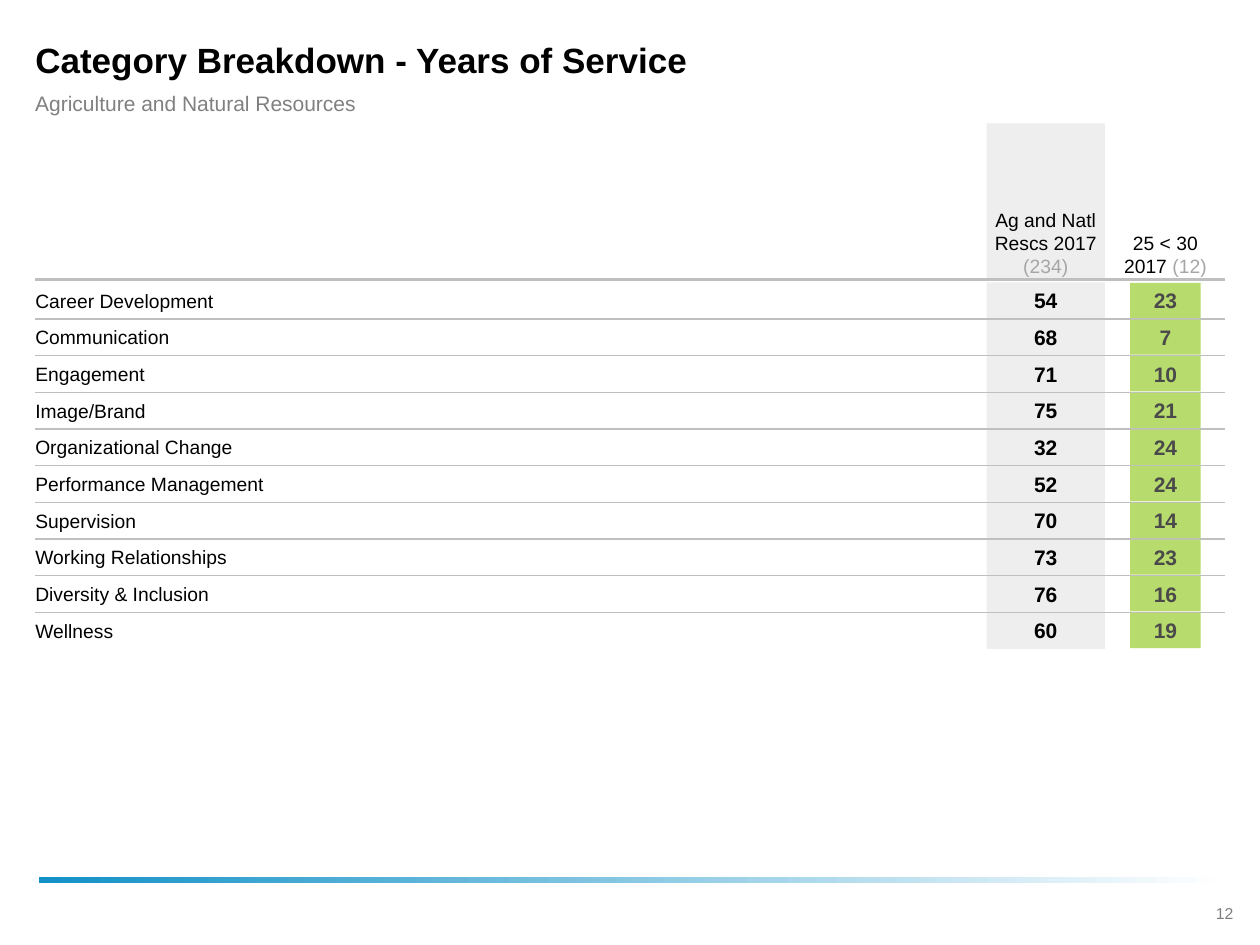
import pptx
import pptx.util
import pptx.oxml.ns
from lxml import etree
from pptx.dml.color import RGBColor
from pptx.enum.shapes import MSO_CONNECTOR, MSO_SHAPE
from pptx.enum.text import MSO_ANCHOR, MSO_AUTO_SIZE, PP_ALIGN
from pptx.util import Inches

COLORS = {
    "ink": "000000",
    "subtitle": "808080",
    "page": "7F7F7F",
    "count": "A6A6A6",
    "rule": "BFBFBF",
    "panel": "EEEEEE",
    "chip": "B7DB6C",
    "chip_text": "4A4A4A",
    "bar_start": "1291C7",
    "bar_end": "FFFFFF",
}
CATEGORIES = [
    ("Career Development", 54, 23),
    ("Communication", 68, 7),
    ("Engagement", 71, 10),
    ("Image/Brand", 75, 21),
    ("Organizational Change", 32, 24),
    ("Performance Management", 52, 24),
    ("Supervision", 70, 14),
    ("Working Relationships", 73, 23),
    ("Diversity & Inclusion", 76, 16),
    ("Wellness", 60, 19),
]
LEFT, RIGHT = 0.28, 9.72
OVERALL_LEFT, GROUP_LEFT, COLUMN_WIDTH = 7.83, 8.78, 0.94
HEADER_TOP, HEADER_HEIGHT = 0.98, 1.25
ROWS_TOP, ROWS_BOTTOM = 2.24, 5.15
ROW_HEIGHT = (ROWS_BOTTOM - ROWS_TOP) / len(CATEGORIES)
CELL_INSETS = (0.03, 0.03, 0.03, 0.03)


def rgb(name):
    """Return the named colour."""
    return RGBColor.from_string(COLORS[name])


def write_text(shape, *runs, size=11, color="ink", bold=False, align=PP_ALIGN.LEFT,
               anchor=MSO_ANCHOR.MIDDLE, insets=(0, 0, 0, 0), wrap=True,
               autosize=MSO_AUTO_SIZE.NONE):
    """Write runs, each a string or a (string, colour) pair, as one paragraph."""
    frame = shape.text_frame
    frame.word_wrap = wrap
    frame.auto_size = autosize
    frame.vertical_anchor = anchor
    frame.margin_left, frame.margin_top, frame.margin_right, frame.margin_bottom = map(Inches, insets)
    paragraph = frame.paragraphs[0]
    paragraph.alignment = align
    for part in runs:
        words, run_color = (part, color) if isinstance(part, str) else part
        run = paragraph.add_run()
        run.text = words
        run.font.name = "Arial"
        run.font.size = pptx.util.Pt(size)
        run.font.bold = bold
        run.font.color.rgb = rgb(run_color)


def add_label(slide, box, *runs, **text_format):
    """Add a text box at box (left, top, width, height)."""
    write_text(slide.shapes.add_textbox(*map(Inches, box)), *runs, **text_format)


def add_block(slide, box, color):
    """Add a borderless rectangle and return it."""
    block = slide.shapes.add_shape(MSO_SHAPE.RECTANGLE, *map(Inches, box))
    block.shadow.inherit = False
    block.fill.solid()
    block.fill.fore_color.rgb = rgb(color)
    block.line.fill.background()
    return block


def add_rule(slide, y, weight):
    """Add a horizontal rule across the content width."""
    rule = slide.shapes.add_connector(
        MSO_CONNECTOR.STRAIGHT, Inches(LEFT), Inches(y), Inches(RIGHT), Inches(y))
    rule.line.color.rgb = rgb("rule")
    rule.line.width = pptx.util.Pt(weight)
    etree.SubElement(rule._element.spPr, pptx.oxml.ns.qn("a:effectLst"))


def add_footer(slide):
    """Add the fading bar and the page number."""
    bar = add_block(slide, (0.31, 6.96, 9.42, 0.05), "bar_start")
    bar.fill.gradient()
    bar.fill.gradient_angle = 0
    for stop, color in zip(bar.fill.gradient_stops, ("bar_start", "bar_end")):
        stop.color.rgb = rgb(color)
    add_label(slide, (9.46, 7.12, 0.52, 0.25), "12", size=9, color="page",
              align=PP_ALIGN.CENTER, anchor=MSO_ANCHOR.TOP,
              insets=(0.1, 0.05, 0.1, 0.05), autosize=MSO_AUTO_SIZE.SHAPE_TO_FIT_TEXT)


def add_headings(slide):
    """Fill the title and add the subtitle."""
    title = slide.shapes.title
    title.left, title.top, title.width, title.height = map(Inches, (LEFT, 0.28, RIGHT - LEFT, 0.38))
    write_text(title, "Category Breakdown - Years of Service", size=20, bold=True,
               insets=(0, 0, 0.35, 0))
    add_label(slide, (LEFT, 0.71, RIGHT - LEFT, 0.21), "Agriculture and Natural Resources",
              size=12, color="subtitle", insets=(0, 0, 0.35, 0))


def add_column_headers(slide):
    """Add the two column headers and the rule under them."""
    add_rule(slide, 2.22, 1.5)
    headers = [(OVERALL_LEFT, "Ag and Natl Rescs 2017 ", "(234)"),
               (GROUP_LEFT, "25 < 30 2017 ", "(12)")]
    for left, name, count in headers:
        add_label(slide, (left, HEADER_TOP, COLUMN_WIDTH, HEADER_HEIGHT), name, (count, "count"),
                  align=PP_ALIGN.CENTER, anchor=MSO_ANCHOR.BOTTOM, insets=CELL_INSETS)


def add_category_row(slide, top, category, overall, group):
    """Add one category with its overall score and group score."""
    add_label(slide, (LEFT, top + 0.03, OVERALL_LEFT - LEFT, 0.23), category)
    add_label(slide, (OVERALL_LEFT, top, COLUMN_WIDTH, ROW_HEIGHT), str(overall), size=12,
              bold=True, align=PP_ALIGN.CENTER, insets=CELL_INSETS)
    chip = add_block(slide, (8.97, top + 0.005, 0.56, 0.28), "chip")
    write_text(chip, str(group), size=12, color="chip_text", bold=True,
               align=PP_ALIGN.CENTER, insets=(0, 0.05, 0, 0.05), wrap=False)


def main():
    """Build the slide and save it."""
    deck = pptx.Presentation()
    deck.slide_width, deck.slide_height = Inches(10), Inches(7.5)
    slide = deck.slides.add_slide(deck.slide_layouts[5])
    add_footer(slide)
    add_headings(slide)
    row_tops = [ROWS_TOP + index * ROW_HEIGHT for index in range(len(CATEGORIES))]
    add_block(slide, (OVERALL_LEFT, HEADER_TOP, COLUMN_WIDTH, HEADER_HEIGHT), "panel")
    for top in row_tops:
        add_block(slide, (OVERALL_LEFT, top, COLUMN_WIDTH, ROW_HEIGHT), "panel")
    add_column_headers(slide)
    for top, row in zip(row_tops, CATEGORIES):
        if top > ROWS_TOP:
            add_rule(slide, top, 0.75)
        add_category_row(slide, top, *row)
    deck.save("out.pptx")


if __name__ == "__main__":
    main()
